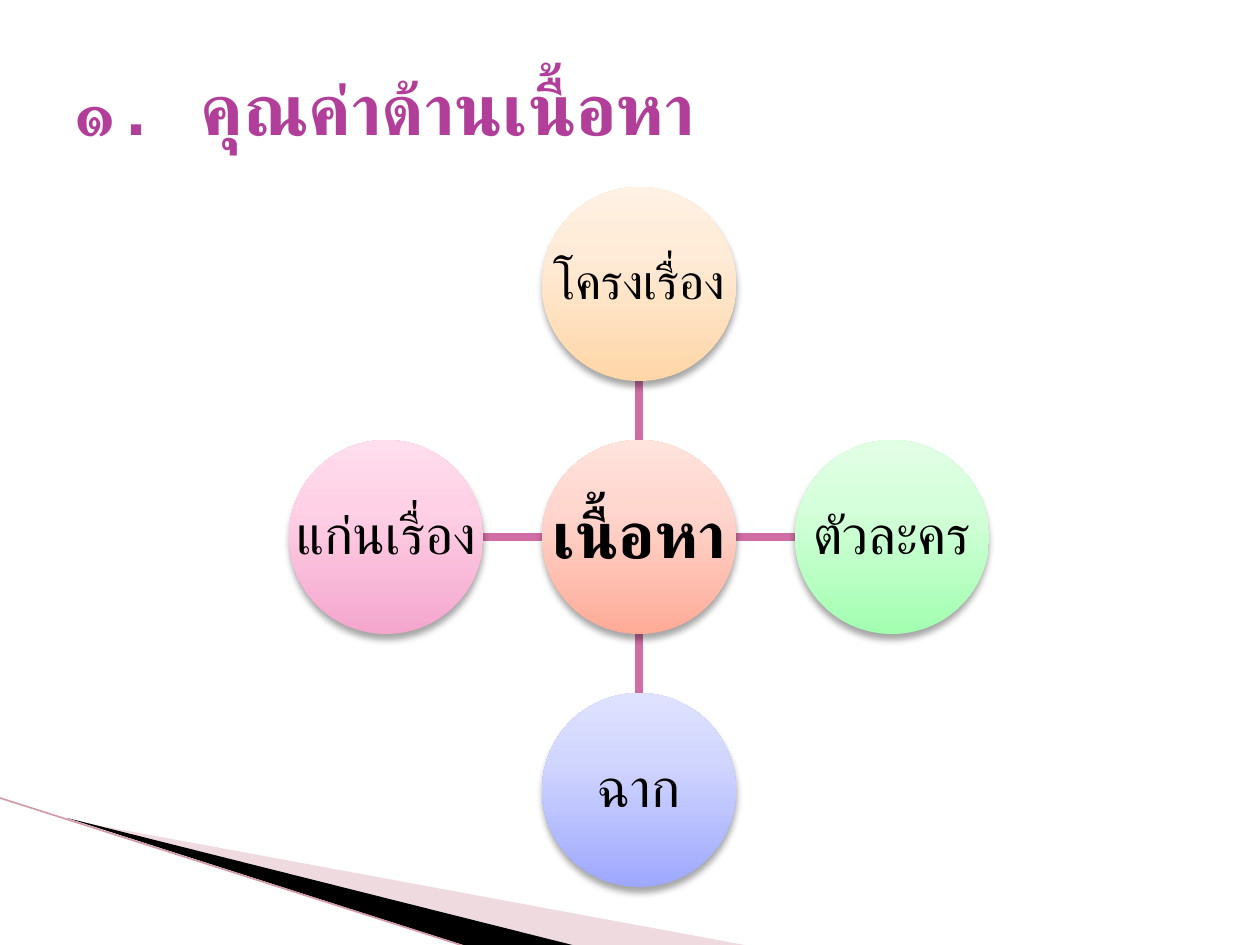
import pptx
import pptx.util
import pptx.dml.color
import pptx.enum.shapes
import pptx.enum.text
import pptx.oxml.ns
from dataclasses import dataclass
from lxml import etree

SCALE = 914400 / 126  # EMU in one px


@dataclass(frozen=True)
class Theme:
    font: str = "Courier New"
    title: str = "B13F9A"
    ink: str = "000000"
    link: str = "CF6DA4"
    edge: str = "D39AA8"
    wedge: str = "D8A3AF"
    head: int = 41
    hub: int = 37
    node: int = 31
    small: int = 28
    # each circle's colours run from the bottom to the top
    red: tuple = ("FFAB97", "FFD7CF", "FFE3DD")
    gold: tuple = ("FFD6A7", "FFEBD7", "FFF1E3")
    green: tuple = ("A2FFB0", "D4FFDA", "E1FFE5")
    blue: tuple = ("9EA8FF", "D1D6FF", "DFE2FF")
    pink: tuple = ("F4A6CD", "FFD0E6", "FFDEED")


THEME = Theme()


def px(*sizes):
    return [pptx.util.Emu(round(size * SCALE)) for size in sizes]


def rgb(code):
    return pptx.dml.color.RGBColor.from_string(code)


def sub(parent, tag, **attrs):
    return etree.SubElement(parent, pptx.oxml.ns.qn(tag), **attrs)


def tint(parent, code, alpha=None):
    """Add a colour element, see-through if alpha is given in percent."""
    color = sub(parent, "a:srgbClr", val=code)
    if alpha is not None:
        sub(color, "a:alpha", val=str(alpha * 1000))


def write(shape, text, size, color=THEME.ink, bold=False, align="LEFT", wrap=True, space=1.0):
    frame = shape.text_frame
    frame.word_wrap = wrap
    frame.vertical_anchor = pptx.enum.text.MSO_ANCHOR.MIDDLE
    para = frame.paragraphs[0]
    para.alignment = getattr(pptx.enum.text.PP_ALIGN, align)
    para.line_spacing = space
    run = para.add_run()
    run.text = text
    font = run.font
    font.name, font.size, font.bold = THEME.font, pptx.util.Pt(size), bold
    font.color.rgb = rgb(color)
    sub(run._r.rPr, "a:cs", typeface=THEME.font)  # Thai uses the complex-script font
    return frame


def draw_line(slide, ends, color, width):
    kind = pptx.enum.shapes.MSO_CONNECTOR.STRAIGHT
    line = slide.shapes.add_connector(kind, *px(*ends))
    line.line.color.rgb = rgb(color)
    line.line.width = pptx.util.Pt(width)
    sub(line._element.spPr, "a:effectLst")


def draw_wedge(slide, points, color, alpha=100):
    start, *rest = points
    build = slide.shapes.build_freeform(*start, scale=SCALE)
    build.add_line_segments(rest, close=True)
    shape = build.convert_to_shape()
    shape.shadow.inherit = False
    shape.line.fill.background()
    shape.fill.solid()
    shape.fill.fore_color.rgb = rgb(color)
    sub(shape._element.spPr.find(".//" + pptx.oxml.ns.qn("a:srgbClr")),
        "a:alpha", val=str(alpha * 1000))


def draw_corner(slide, left, top):
    """Draw the slanted wedges that run off the bottom edge."""
    def at(*points):
        return [(left + x, top + y) for x, y in points]

    draw_wedge(slide, at((69, 22), (750, 148), (575, 148)), THEME.wedge, 40)
    draw_wedge(slide, at((67, 20), (576, 148), (469, 149)), THEME.ink)
    (x1, y1), (x2, y2) = at((0, 0), (467, 149))
    draw_line(slide, (x1, y1, x2, y2), THEME.edge, 0.95)


def draw_circle(slide, x, y, size, text, colors, points, bold=False):
    """Draw a shaded, labelled circle centred on x, y."""
    kind = pptx.enum.shapes.MSO_SHAPE.OVAL
    shape = slide.shapes.add_shape(kind, *px(x - size / 2, y - size / 2, size, size))
    shape.line.fill.background()
    shape.fill.gradient()
    shape.fill.gradient_angle = 90
    props = shape._element.spPr
    stops = props.find(".//" + pptx.oxml.ns.qn("a:gsLst"))
    for stop in list(stops):
        stops.remove(stop)
    for place, color in zip((0, 65, 100), colors):
        tint(sub(stops, "a:gs", pos=str(place * 1000)), color)
    shape.shadow.inherit = False
    shade = sub(props.find(pptx.oxml.ns.qn("a:effectLst")), "a:outerShdw",
                blurRad=str(pptx.util.Pt(4)), dist=str(pptx.util.Pt(3)),
                dir="5400000", rotWithShape="0")
    tint(shade, THEME.ink, 35)
    frame = write(shape, text, points, bold=bold, align="CENTER", wrap=False, space=0.9)
    frame.margin_left = frame.margin_right = frame.margin_top = frame.margin_bottom = 0


def draw_wheel(slide, left, top, side, size):
    """Draw a hub with four nodes, filling a square box."""
    step = (side - size) / 2
    x, y = left + side / 2, top + side / 2
    nodes = [
        (0, -1, "โครงเรื่อง", THEME.gold, THEME.small),
        (1, 0, "ตัวละคร", THEME.green, THEME.node),
        (0, 1, "ฉาก", THEME.blue, THEME.node),
        (-1, 0, "แก่นเรื่อง", THEME.pink, THEME.node),
    ]
    near, far = size / 2, step - size / 2
    for dx, dy, text, colors, points in nodes:
        ends = (x + dx * near, y + dy * near, x + dx * far, y + dy * far)
        draw_line(slide, ends, THEME.link, 4.33)
        draw_circle(slide, x + dx * step, y + dy * step, size, text, colors, points)
    draw_circle(slide, x, y, size, "เนื้อหา", THEME.red, THEME.hub, bold=True)


def draw_title(slide, *box):
    shape = slide.shapes.add_textbox(*px(*box))
    write(shape, "๑. คุณค่าด้านเนื้อหา", THEME.head, THEME.title, bold=True)


def main():
    deck = pptx.Presentation()
    deck.slide_width, deck.slide_height = px(1260, 945)
    slide = deck.slides.add_slide(deck.slide_layouts[6])
    draw_corner(slide, 0, 798)
    draw_wheel(slide, 289, 187, 700, 194)
    draw_title(slide, 63, 38, 1134, 137)
    deck.save("out.pptx")


if __name__ == "__main__":
    main()
